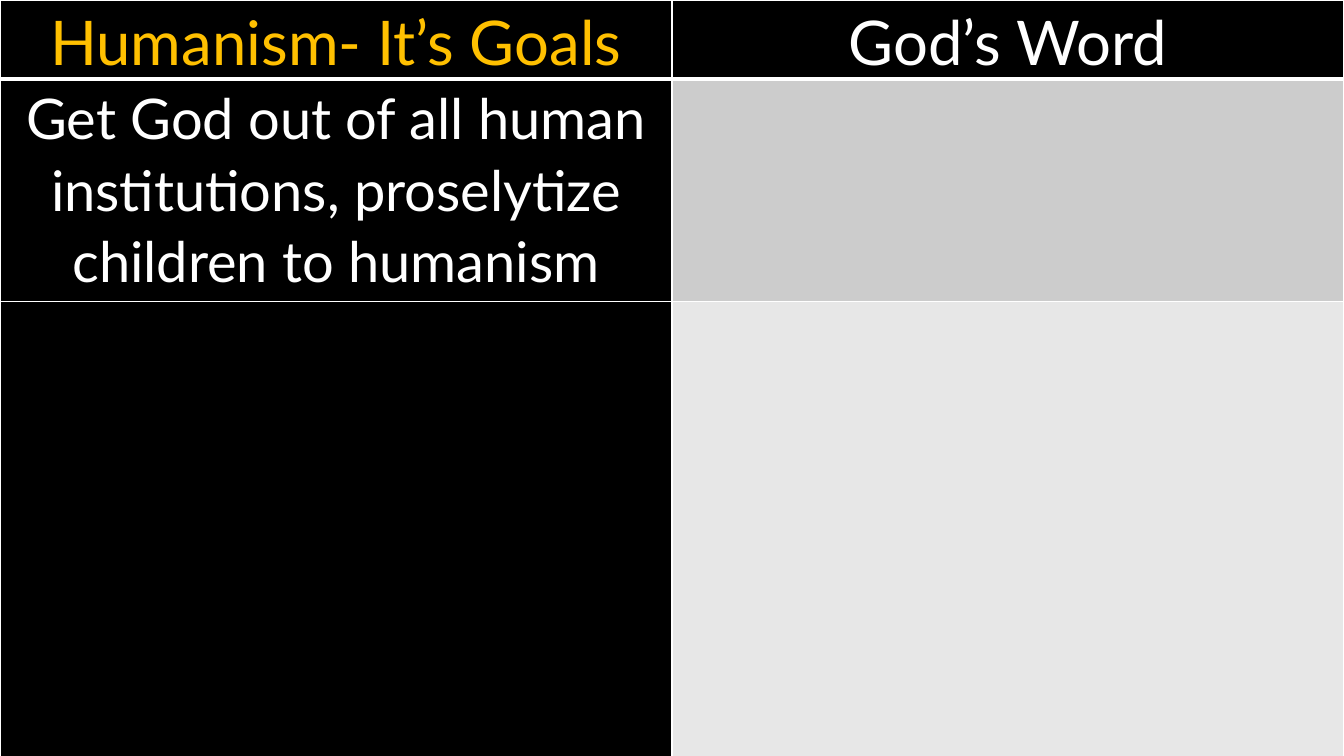
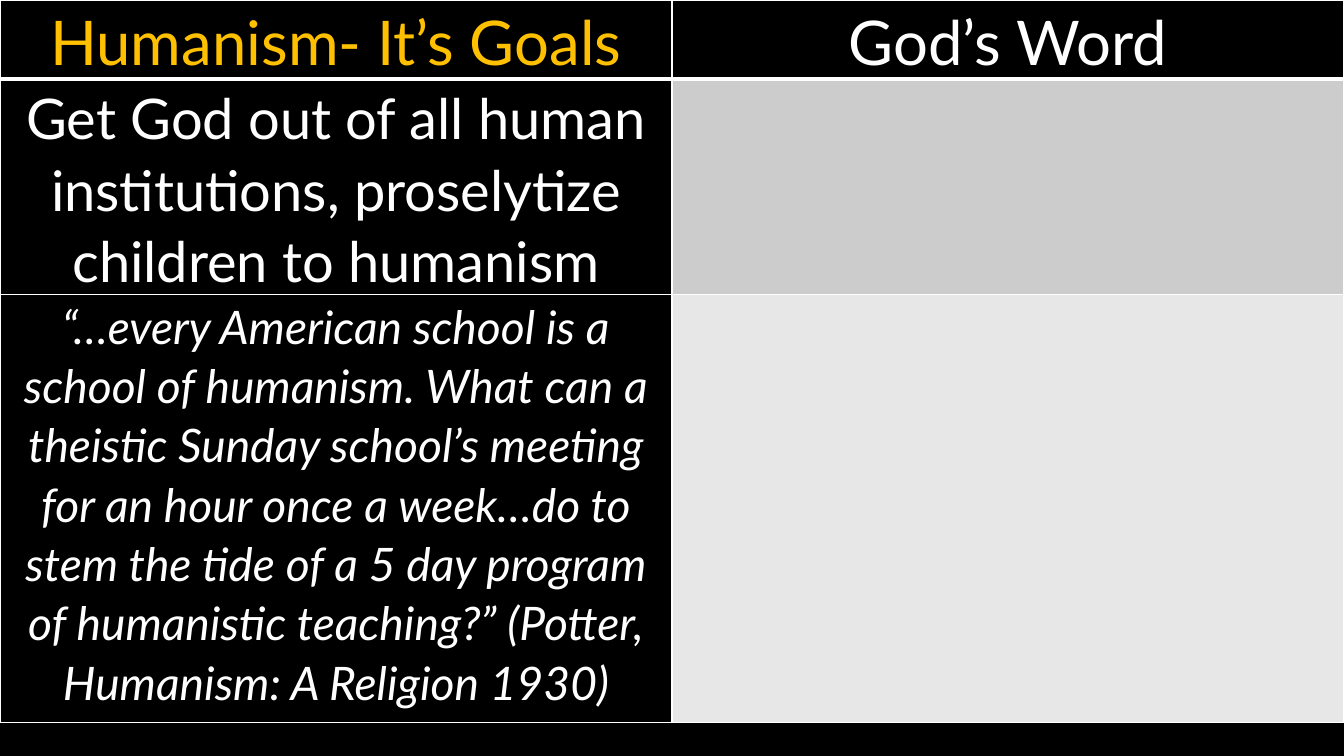
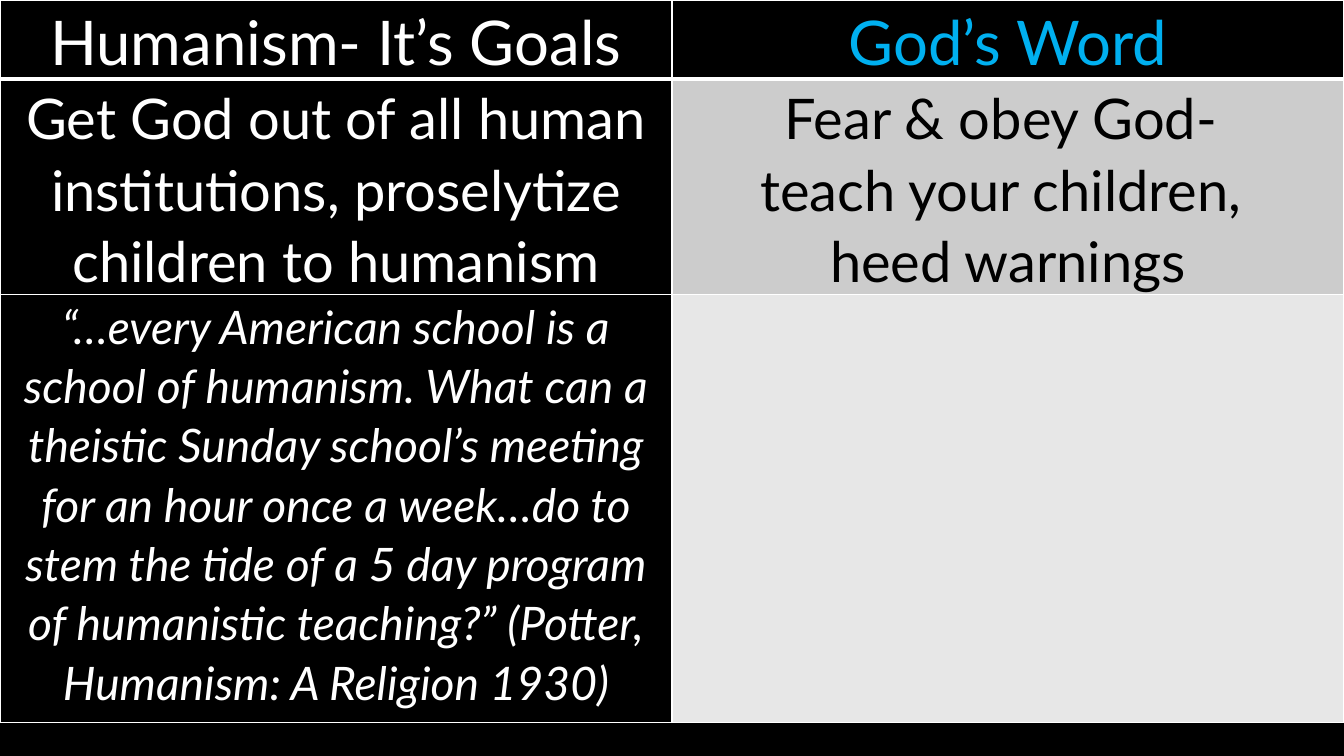
from dataclasses import dataclass

from lxml import etree
from pptx import Presentation
from pptx import util as u
from pptx.dml import color
from pptx.enum import text
from pptx.oxml import ns


@dataclass(frozen=True)
class Theme:
    font: str = "Lato"
    black: str = "000000"
    white: str = "FFFFFF"
    gold: str = "FFC000"
    blue: str = "00B0F0"
    band_dark: str = "CCCCCC"
    band_light: str = "E7E7E7"
    header_size: int = 44
    goal_size: int = 40
    quote_size: int = 33
    line_spacing: float = 1.07
    rule: int = 1
    header_rule: int = 3


THEME = Theme()
WIDTH, HEIGHT = u.Cm(33.87), u.Cm(19.05)

HEADERS = ["Humanism- It’s Goals"], ["God’s Word"]
GOAL = ["Get God out of all human institutions, proselytize children to humanism"]
QUOTE = [
    "“…every American school is a school of humanism. What can a theistic "
    "Sunday school’s meeting for an hour once a week…do to stem the tide of a "
    "5 day program of humanistic teaching?” (Potter, Humanism: A Religion 1930)"
]
ANSWER = ["Fear & obey God- ", "teach your children, ", "heed warnings"]

# Look of each table row: text size, italic, fills of the two columns
ROW_STYLES = [
    (THEME.header_size, False, (THEME.black, THEME.black)),
    (THEME.goal_size, False, (THEME.black, THEME.band_dark)),
    (THEME.quote_size, True, (THEME.black, THEME.band_light)),
]
BODY_COLORS = THEME.white, THEME.black

FULL_ROWS = 1.98, 5.61, 11.46
QUOTE_ROWS = 1.88, 5.21, 10.77


def rgb(value):
    return color.RGBColor.from_string(value)


def set_borders(cell, row):
    """Thin white rules, with a heavy one between header and body."""
    properties = cell._tc.get_or_add_tcPr()
    top = THEME.header_rule if row == 1 else THEME.rule
    bottom = THEME.header_rule if row == 0 else THEME.rule
    sides = {"L": THEME.rule, "R": THEME.rule, "T": top, "B": bottom}
    for side, points in sides.items():
        line = etree.SubElement(properties, ns.qn(f"a:ln{side}"), w=str(u.Pt(points)))
        fill = etree.SubElement(line, ns.qn("a:solidFill"))
        etree.SubElement(fill, ns.qn("a:srgbClr"), val=THEME.white)


def write_cell(cell, lines, size, italic, text_color):
    for index, line in enumerate(lines):
        frame = cell.text_frame
        paragraph = frame.add_paragraph() if index else frame.paragraphs[0]
        paragraph.alignment = text.PP_ALIGN.CENTER
        paragraph.line_spacing = THEME.line_spacing
        run = paragraph.add_run()
        run.text = line
        font = run.font
        font.name, font.size = THEME.font, u.Pt(size)
        font.bold, font.italic = False, italic
        font.color.rgb = rgb(text_color)


def add_comparison(slide, left, top, width, row_heights, header_colors, body):
    """Two-column table: goals on the left, replies on the right."""
    heights = [u.Cm(height) for height in row_heights]
    rows = [HEADERS, *body]
    table = slide.shapes.add_table(
        len(rows), 2, left, top, width, sum(heights)
    ).table
    for column in table.columns:
        column.width = width // 2
    for row, (contents, style) in enumerate(zip(rows, ROW_STYLES)):
        size, italic, fills = style
        table.rows[row].height = heights[row]
        text_colors = BODY_COLORS if row else header_colors
        for column, lines in enumerate(contents):
            cell = table.cell(row, column)
            cell.margin_left = cell.margin_right = u.Cm(0.18)
            cell.margin_top = cell.margin_bottom = u.Cm(0)
            set_borders(cell, row)
            cell.fill.solid()
            cell.fill.fore_color.rgb = rgb(fills[column])
            write_cell(cell, lines, size, italic, text_colors[column])


def main():
    presentation = Presentation()
    presentation.slide_width, presentation.slide_height = WIDTH, HEIGHT

    # Shared black background
    background = presentation.slide_master.background.fill
    background.solid()
    background.fore_color.rgb = rgb(THEME.black)

    # Row heights, header colours and body cells of each slide
    goals_first = THEME.gold, THEME.white
    word_first = THEME.white, THEME.blue
    slides = [
        (FULL_ROWS, goals_first, [(GOAL, []), ([], [])]),
        (QUOTE_ROWS, goals_first, [(GOAL, []), (QUOTE, [])]),
        (QUOTE_ROWS, word_first, [(GOAL, ANSWER), (QUOTE, [])]),
    ]
    blank = presentation.slide_layouts.get_by_name("Blank")
    for row_heights, header_colors, body in slides:
        slide = presentation.slides.add_slide(blank)
        add_comparison(slide, u.Cm(0), u.Cm(0), WIDTH, row_heights, header_colors, body)

    presentation.save("out.pptx")


if __name__ == "__main__":
    main()
